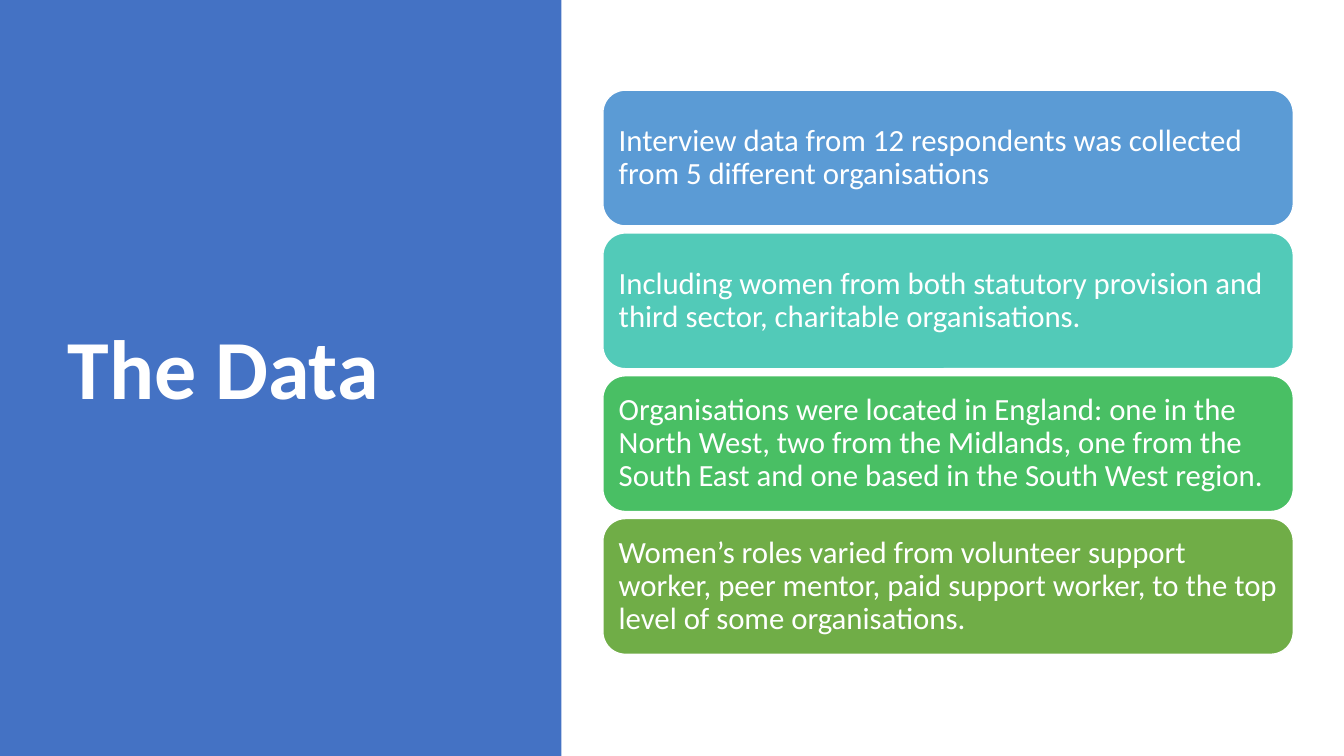
from pptx import Presentation
from pptx.dml.color import RGBColor
from pptx.enum.shapes import MSO_SHAPE
from pptx.enum.text import MSO_ANCHOR, PP_ALIGN
from pptx.util import Pt

COLOURS = {
    "panel": "4472C4",
    "white": "FFFFFF",
    "blue": "5B9BD5",
    "teal": "52CAB8",
    "green": "49BF64",
    "olive": "70AD47",
}

FINDINGS = [
    ("blue", "Interview data from 12 respondents was collected from 5 different organisations"),
    ("teal", "Including women from both statutory provision and third sector, "
             "charitable organisations."),
    ("green", "Organisations were located in England: one in the North West, two from the "
              "Midlands, one from the South East and one based in the South West region."),
    ("olive", "Women’s roles varied from volunteer support worker, peer mentor, paid support "
              "worker, to the top level of some organisations."),
]

CARD_LEFT, CARD_TOP = 430.6, 64.4
CARD_WIDTH, CARD_HEIGHT, CARD_GAP = 493.2, 97, 5


class SlideBuilder:
    font = "Calibri"
    line_spacing = 0.9

    def __init__(self, slide):
        self.slide = slide

    def colour(self, name):
        return RGBColor.from_string(COLOURS[name])

    def add_text(self, shape, text, size, bold=False):
        frame = shape.text_frame
        frame.word_wrap = True
        frame.vertical_anchor = MSO_ANCHOR.MIDDLE
        paragraph = frame.paragraphs[0]
        paragraph.alignment = PP_ALIGN.LEFT
        paragraph.line_spacing = self.line_spacing
        run = paragraph.add_run()
        run.text = text
        run.font.name = self.font
        run.font.size = Pt(size)
        run.font.bold = bold
        run.font.color.rgb = self.colour("white")

    def box(self, kind, left, top, width, height, fill):
        shape = self.slide.shapes.add_shape(kind, Pt(left), Pt(top), Pt(width), Pt(height))
        shape.shadow.inherit = False
        shape.fill.solid()
        shape.fill.fore_color.rgb = self.colour(fill)
        shape.line.fill.background()
        return shape

    def panel(self, width, height):
        """Add the side panel behind everything else, including the title."""
        shape = self.box(MSO_SHAPE.RECTANGLE, 0, 0, width, height, "panel")
        self.slide.shapes._spTree.insert(2, shape._element)

    def title(self, text, left, top, width, height):
        title = self.slide.shapes.title
        title.left, title.top = Pt(left), Pt(top)
        title.width, title.height = Pt(width), Pt(height)
        self.add_text(title, text, 60, bold=True)

    def card(self, top, fill, text):
        shape = self.box(MSO_SHAPE.ROUNDED_RECTANGLE, CARD_LEFT, top,
                         CARD_WIDTH, CARD_HEIGHT, fill)
        shape.line.color.rgb = self.colour("white")
        shape.line.width = Pt(1)
        frame = shape.text_frame
        frame.margin_left = frame.margin_right = Pt(6.6)
        frame.margin_top = frame.margin_bottom = Pt(6.6)
        self.add_text(shape, text, 22)


def main():
    presentation = Presentation()
    presentation.slide_width, presentation.slide_height = Pt(960), Pt(540)
    title_only = presentation.slide_layouts[5]
    builder = SlideBuilder(presentation.slides.add_slide(title_only))

    builder.panel(401, 540)
    builder.title("The Data", 41, 49, 299.5, 433.4)
    for index, (fill, text) in enumerate(FINDINGS):
        builder.card(CARD_TOP + index * (CARD_HEIGHT + CARD_GAP), fill, text)

    presentation.save("out.pptx")


if __name__ == "__main__":
    main()
